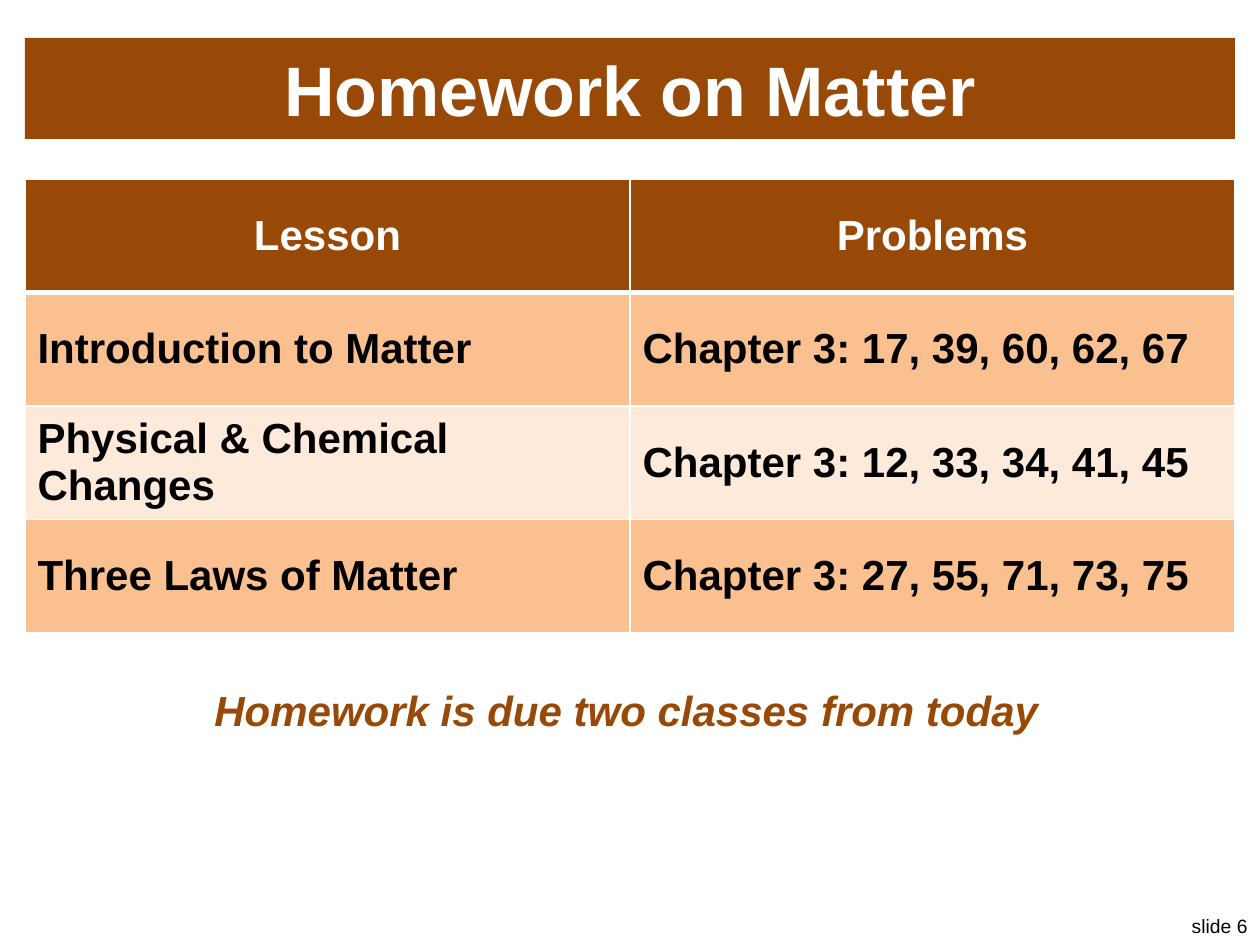
from lxml.etree import SubElement
from pptx import Presentation
from pptx.dml.color import RGBColor
from pptx.enum.shapes import MSO_SHAPE
from pptx.enum.text import MSO_ANCHOR, MSO_AUTO_SIZE, PP_ALIGN
from pptx.oxml.ns import qn
from pptx.util import Emu, Pt

PIXELS_PER_INCH = 126
BROWN, ORANGE, PEACH = "984807", "FAC090", "FDEADA"
WHITE, BLACK = "FFFFFF", "000000"
HOMEWORK = [
    ("Lesson", "Problems"),
    ("Introduction to Matter", "Chapter 3: 17, 39, 60, 62, 67"),
    ("Physical & Chemical Changes", "Chapter 3: 12, 33, 34, 41, 45"),
    ("Three Laws of Matter", "Chapter 3: 27, 55, 71, 73, 75"),
]


def px(length):
    return Emu(round(length * 914400 / PIXELS_PER_INCH))


def color(hex_value):
    return RGBColor.from_string(hex_value)


def fill_with(item, hex_value):
    item.fill.solid()
    item.fill.fore_color.rgb = color(hex_value)


def write(text_frame, text, hex_value, alignment=PP_ALIGN.LEFT, **font_format):
    paragraph = text_frame.paragraphs[0]
    paragraph.alignment = alignment
    run = paragraph.add_run()
    run.text = text
    run.font.color.rgb = color(hex_value)
    for name, value in {"name": "Arial", **font_format}.items():
        setattr(run.font, name, value)


def add_title(slide, box, text):
    banner = slide.shapes.add_shape(MSO_SHAPE.RECTANGLE, *map(px, box))
    banner.shadow.inherit = False
    fill_with(banner, BROWN)
    banner.line.fill.background()
    banner.text_frame.vertical_anchor = MSO_ANCHOR.MIDDLE
    write(banner.text_frame, text, WHITE, PP_ALIGN.CENTER, size=Pt(40), bold=True)


def add_borders(cell, widths):
    """Draw white borders; widths are points for left, right, top and bottom."""
    properties = cell._tc.get_or_add_tcPr()
    for position, (side, width) in enumerate(zip("LRTB", widths)):
        border = properties.makeelement(qn(f"a:ln{side}"), {"w": str(Pt(width))})
        fill = SubElement(border, qn("a:solidFill"))
        SubElement(fill, qn("a:srgbClr"), val=WHITE)
        properties.insert(position, border)


def add_homework_table(slide, box, rows):
    left, top, width, height = box
    row_count, column_count = len(rows), len(rows[0])
    table = slide.shapes.add_table(row_count, column_count, *map(px, box)).table
    for column in table.columns:
        column.width = px(width / column_count)
    for row_index, texts in enumerate(rows):
        table.rows[row_index].height = px(height / row_count)
        is_header = row_index == 0
        fill = BROWN if is_header else ORANGE if row_index % 2 else PEACH
        for column_index, text in enumerate(texts):
            cell = table.cell(row_index, column_index)
            cell.vertical_anchor = MSO_ANCHOR.MIDDLE
            fill_with(cell, fill)
            add_borders(cell, (1, 1, 3 if row_index == 1 else 1, 3 if is_header else 1))
            write(cell.text_frame, text, WHITE if is_header else BLACK,
                  PP_ALIGN.CENTER if is_header else PP_ALIGN.LEFT,
                  size=Pt(24), bold=True)


def add_line_of_text(slide, box, text, hex_value, alignment, **font_format):
    text_frame = slide.shapes.add_textbox(*map(px, box)).text_frame
    text_frame.word_wrap = False
    text_frame.auto_size = MSO_AUTO_SIZE.SHAPE_TO_FIT_TEXT
    write(text_frame, text, hex_value, alignment, **font_format)


def main():
    presentation = Presentation()
    presentation.slide_width, presentation.slide_height = px(1260), px(945)
    slide = presentation.slides.add_slide(presentation.slide_layouts[6])
    add_line_of_text(slide, (1166, 908, 94, 36), "slide 6", BLACK,
                     PP_ALIGN.RIGHT, size=Pt(11))
    add_title(slide, (25, 38, 1210, 101), "Homework on Matter")
    add_homework_table(slide, (25, 179, 1210, 454), HOMEWORK)
    add_line_of_text(slide, (202, 678, 857, 63),
                     "Homework is due two classes from today", BROWN,
                     PP_ALIGN.LEFT, size=Pt(24), bold=True, italic=True)
    presentation.save("out.pptx")


if __name__ == "__main__":
    main()
